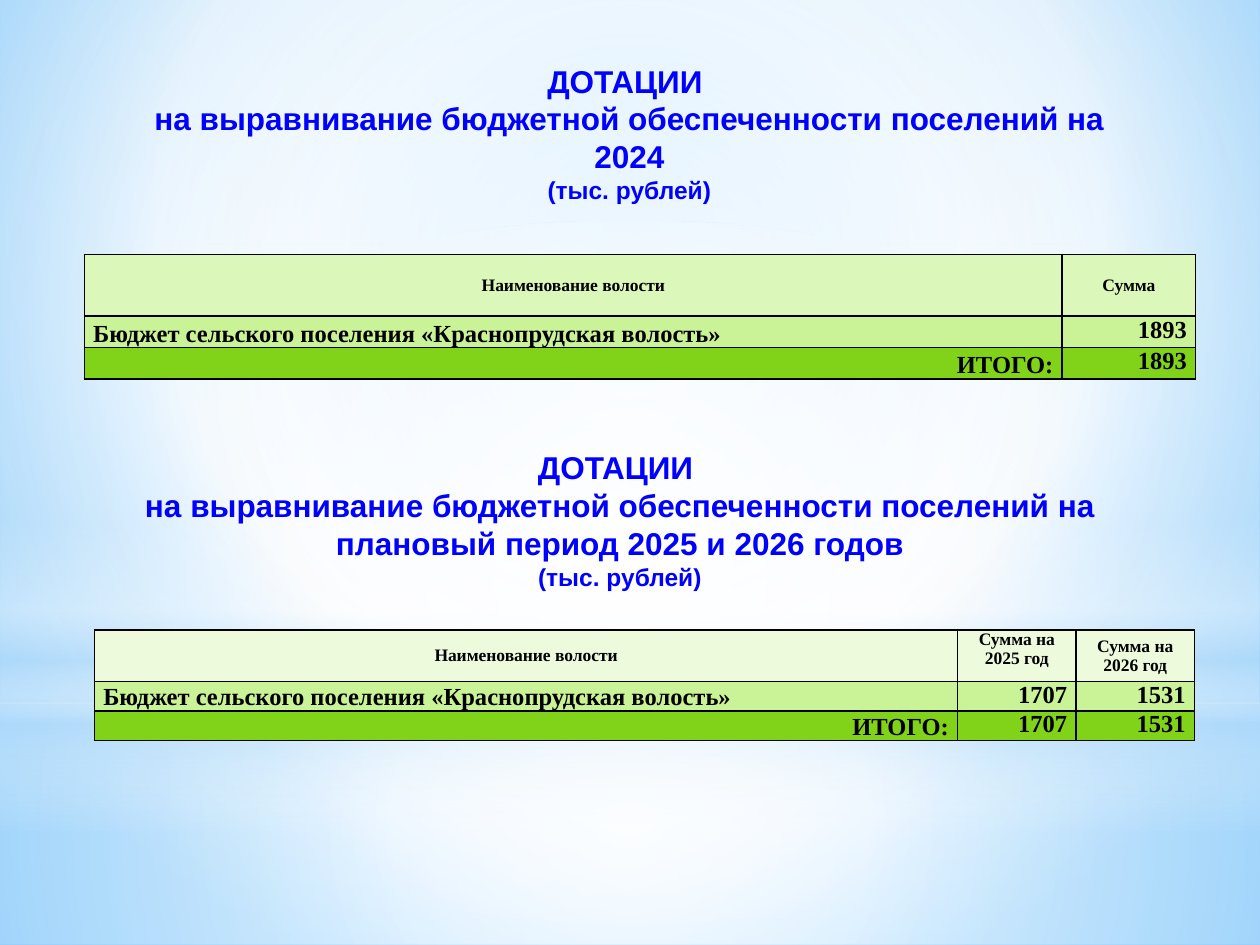
from lxml import etree
from pptx import Presentation
from pptx.dml.color import RGBColor
from pptx.enum.shapes import MSO_SHAPE
from pptx.enum.text import MSO_ANCHOR, MSO_AUTO_SIZE, PP_ALIGN
from pptx.oxml.ns import qn
from pptx.util import Inches, Pt

RECT, OVAL = MSO_SHAPE.RECTANGLE, MSO_SHAPE.OVAL
TOP, MIDDLE, BOTTOM = MSO_ANCHOR.TOP, MSO_ANCHOR.MIDDLE, MSO_ANCHOR.BOTTOM
LEFT, CENTER, RIGHT = PP_ALIGN.LEFT, PP_ALIGN.CENTER, PP_ALIGN.RIGHT
FIT = MSO_AUTO_SIZE.SHAPE_TO_FIT_TEXT

BLUE, BLACK, WHITE, SKY = "0000FF", "000000", "FFFFFF", "B4DCFA"
ROW_FILL, TOTAL_FILL = "CAF297", "81D31A"
MIDPOINT = (50, 50, 50, 50)

# Box, shape, stops (position %, colour, opacity %), centre of a radial gradient
GLOWS = [
    ((0, 5.58, 10, 1.92), RECT,
     [(0, WHITE, 91), (37, WHITE, 76), (100, SKY, 79)], MIDPOINT),
    ((0, 0, 10, 5.58), RECT,
     [(0, WHITE, 89), (48, WHITE, 62), (100, SKY, 79)], MIDPOINT),
    ((0, 4.12, 10, 2.5), RECT,
     [(0, WHITE, 0), (29, WHITE, 30), (45, SKY, 40), (55, WHITE, 26),
      (65, SKY, 60), (100, WHITE, 0)], None),
    ((0, 1.75, 10, 5.58), OVAL, [(0, WHITE, 100), (56, WHITE, 0)], MIDPOINT),
]


def rgb(value):
    return RGBColor.from_string(value)


def set_gradient(parent, stops, center=None):
    """Replace a solid fill by a radial gradient, or a vertical one without center."""
    grad = etree.Element(qn("a:gradFill"), rotWithShape="1")
    stop_list = etree.SubElement(grad, qn("a:gsLst"))
    for pos, color, opacity in stops:
        gs = etree.SubElement(stop_list, qn("a:gs"), pos=str(pos * 1000))
        clr = etree.SubElement(gs, qn("a:srgbClr"), val=color)
        if opacity < 100:
            etree.SubElement(clr, qn("a:alpha"), val=str(opacity * 1000))
    if center:
        route = etree.SubElement(grad, qn("a:path"))
        route.set("path", "circle")
        sides = {side: str(v * 1000) for side, v in zip("ltrb", center)}
        etree.SubElement(route, qn("a:fillToRect"), **sides)
    else:
        etree.SubElement(grad, qn("a:lin"), ang="5400000", scaled="0")
    parent.replace(parent.find(qn("a:solidFill")), grad)


def add_backdrop(s):
    s.background.fill.solid()
    set_gradient(s._element.find(".//" + qn("p:bgPr")),
                 [(0, "9ED5FF", 100), (60, WHITE, 100), (100, "5BB9FF", 100)],
                 (20, 10, 20, 60))
    for box, kind, stops, center in GLOWS:
        sp = s.shapes.add_shape(kind, *map(Inches, box))
        sp.shadow.inherit = False
        sp.line.fill.background()
        sp.fill.solid()
        set_gradient(sp._element.spPr, stops, center)


def write(p, text, size, font, color, align):
    p.alignment = align
    r = p.add_run()
    r.text = text
    r.font.color.rgb = rgb(color)
    for name, value in {"size": Pt(size), "name": font, "bold": True}.items():
        setattr(r.font, name, value)


def add_heading(s, box, period):
    tf = s.shapes.add_textbox(*map(Inches, box)).text_frame
    tf.word_wrap = True
    tf.auto_size = FIT
    lines = [("ДОТАЦИИ ", 18),
             (f"на выравнивание бюджетной обеспеченности поселений на {period}", 18),
             ("(тыс. рублей)", 14)]
    for i, (text, size) in enumerate(lines):
        p = tf.add_paragraph() if i else tf.paragraphs[0]
        write(p, text, size, "Arial", BLUE, CENTER)


def add_borders(cell):
    tc_pr = cell._tc.get_or_add_tcPr()
    for i, side in enumerate(("lnL", "lnR", "lnT", "lnB")):
        ln = etree.Element(qn(f"a:{side}"), w=str(Pt(1)))
        fill = etree.SubElement(ln, qn("a:solidFill"))
        etree.SubElement(fill, qn("a:srgbClr"), val=BLACK)
        tc_pr.insert(i, ln)


def fill_cell(cell, text, size, fill, align, anchor):
    formats = {"margin_left": Inches(0.07), "margin_right": Inches(0.07),
               "margin_top": 0, "margin_bottom": 0, "vertical_anchor": anchor}
    for name, value in formats.items():
        setattr(cell, name, value)
    cell.fill.solid()
    cell.fill.fore_color.rgb = rgb(fill)
    add_borders(cell)
    write(cell.text_frame.paragraphs[0], text, size, "Times New Roman", BLACK, align)


def add_grants_table(s, box, widths, heights, head_fill, sums):
    """sums holds (heading, heading anchor, amount) for each column of amounts."""
    table = s.shapes.add_table(3, len(widths), *map(Inches, box)).table
    table.first_row = table.horz_banding = False
    for col, width in zip(table.columns, widths):
        col.width = Inches(width)
    for row, height in zip(table.rows, heights):
        row.height = Inches(height)

    names = [("Наименование волости", 10, head_fill, CENTER, MIDDLE),
             ("Бюджет сельского поселения «Краснопрудская волость»", 14,
              ROW_FILL, LEFT, BOTTOM),
             ("ИТОГО:", 14, TOTAL_FILL, RIGHT, BOTTOM)]
    columns = [names]
    for heading, anchor, amount in sums:
        columns.append([(heading, 10, head_fill, CENTER, anchor),
                        (amount, 14, ROW_FILL, RIGHT, TOP),
                        (amount, 14, TOTAL_FILL, RIGHT, TOP)])
    for c, column in enumerate(columns):
        for r, content in enumerate(column):
            fill_cell(table.cell(r, c), *content)


def main():
    prs = Presentation()
    prs.slide_width, prs.slide_height = Inches(10), Inches(7.5)
    s = prs.slides.add_slide(prs.slide_layouts[6])
    add_backdrop(s)
    add_heading(s, (0.98, 0.44, 8.03, 1.25), "2024")
    add_grants_table(s, (0.67, 2.02, 8.82, 0.98), (7.76, 1.06), (0.49, 0.25, 0.25),
                     "DCF7BA", [("Сумма", MIDDLE, "1893")])
    add_heading(s, (0.67, 3.51, 8.5, 1.25), "плановый период 2025 и 2026 годов")
    add_grants_table(s, (0.75, 5, 8.74, 0.88), (6.85, 0.94, 0.94), (0.41, 0.23, 0.23),
                     "EDFBDC", [("Сумма на 2025 год", TOP, "1707"),
                                ("Сумма на 2026 год", MIDDLE, "1531")])
    prs.save("out.pptx")


if __name__ == "__main__":
    main()
